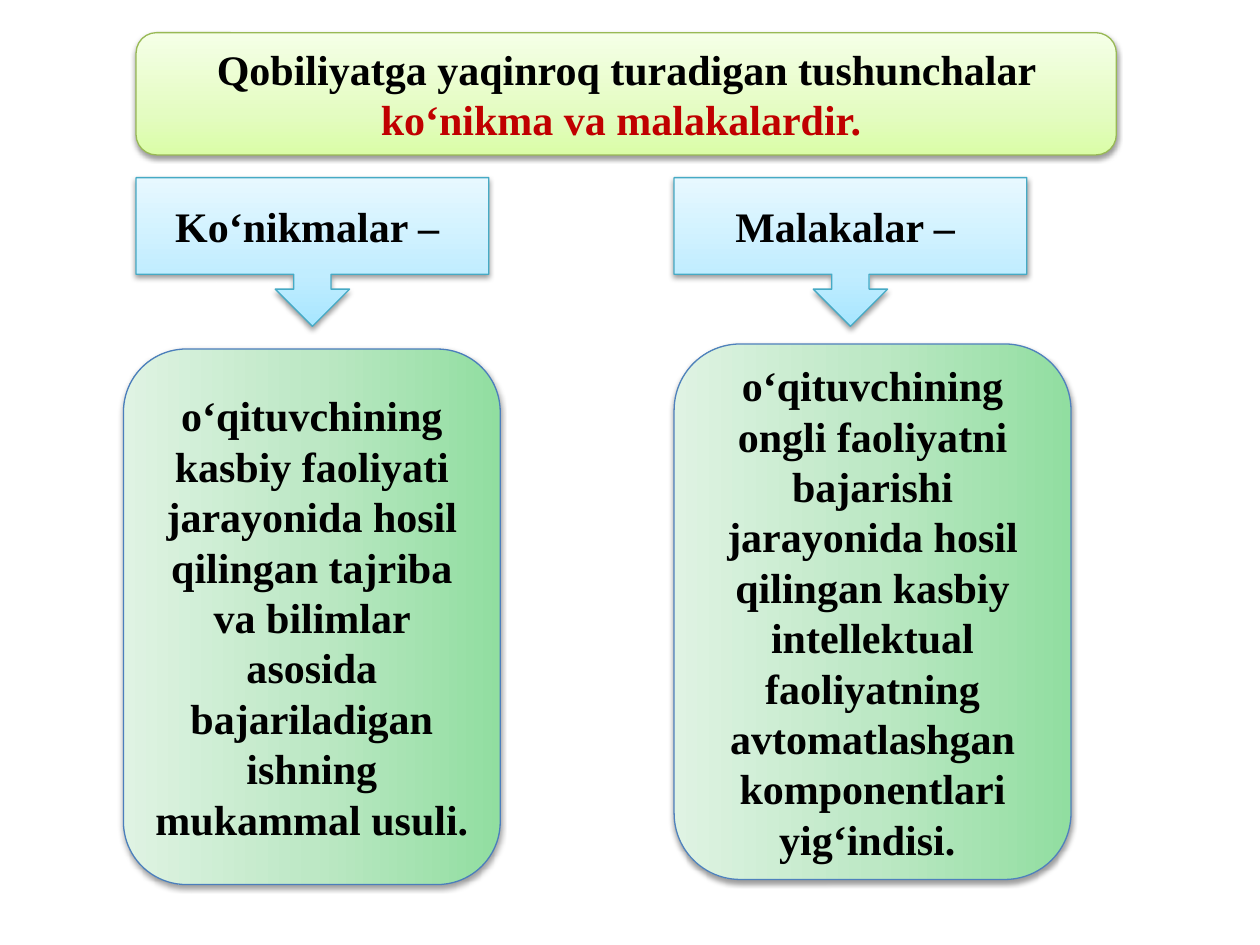
from collections import namedtuple
from dataclasses import dataclass, replace

from lxml import etree
from pptx import Presentation
from pptx.dml.color import RGBColor
from pptx.enum.shapes import MSO_SHAPE
from pptx.enum.text import MSO_ANCHOR, PP_ALIGN
from pptx.oxml.ns import qn
from pptx.util import Inches, Pt

ROUNDED = MSO_SHAPE.ROUNDED_RECTANGLE
CALLOUT = MSO_SHAPE.DOWN_ARROW_CALLOUT
PANEL = MSO_SHAPE.FLOWCHART_ALTERNATE_PROCESS
CENTER = PP_ALIGN.CENTER
MIDDLE = MSO_ANCHOR.MIDDLE

GRID = 0.1  # inches per column and per row: 100 columns by 75 rows
CALLOUT_WIDTH, CALLOUT_HEIGHT, PANEL_HEIGHT = 28, 11.8, 42.5

Box = namedtuple("Box", "left top width height")


@dataclass(frozen=True)
class Look:
    stops: tuple  # (percent, colour) pairs
    angle: int  # degrees clockwise
    line: str


@dataclass(frozen=True)
class Theme:
    font: str = "Times New Roman"
    size: int = 24
    text: str = "000000"
    accent: str = "C00000"
    line_width: float = 0.75
    header: Look = Look(((0, "DAFDA7"), (35, "E4FCC2"), (100, "F5FFE7")), 270, "98B955")
    callout: Look = Look(((0, "A7E6FF"), (35, "C1EDFF"), (100, "E7F8FF")), 270, "46AAC5")
    panel: Look = Look(((0, "91DEA0"), (50, "BDE8C5"), (100, "DFF3E3")), 180, "4B7EBC")


THEME = Theme()


def add_color(parent, color):
    return etree.SubElement(parent, qn("a:srgbClr"), val=color)


def apply_gradient(shape, look):
    gradient = etree.Element(qn("a:gradFill"), rotWithShape="1")
    stops = etree.SubElement(gradient, qn("a:gsLst"))
    for percent, color in look.stops:
        add_color(etree.SubElement(stops, qn("a:gs"), pos=str(percent * 1000)), color)
    etree.SubElement(gradient, qn("a:lin"), ang=str(look.angle * 60000), scaled="0")
    shape._element.spPr.find(qn("a:prstGeom")).addnext(gradient)


def apply_shadow(shape):
    shape.shadow.inherit = False
    effects = shape._element.spPr.find(qn("a:effectLst"))
    shadow = etree.SubElement(effects, qn("a:outerShdw"), blurRad="40000",
                              dist="20000", dir="5400000", rotWithShape="0")
    etree.SubElement(add_color(shadow, "000000"), qn("a:alpha"), val="38000")


def add_card(page, kind, box, look, spans):
    """Place a shaded shape with centred text; spans are (text, colour) pairs."""
    shape = page.shapes.add_shape(kind, *(Inches(length * GRID) for length in box))
    shape.line.color.rgb = RGBColor.from_string(look.line)
    shape.line.width = Pt(THEME.line_width)
    apply_gradient(shape, look)
    apply_shadow(shape)
    frame = shape.text_frame
    frame.word_wrap = True
    frame.vertical_anchor = MIDDLE
    para = frame.paragraphs[0]
    para.alignment = CENTER
    for text, color in spans:
        span = para.add_run()
        span.text = text
        span.font.name = THEME.font
        span.font.size = Pt(THEME.size)
        span.font.bold = True
        span.font.color.rgb = RGBColor.from_string(color)


def add_header(page, box):
    add_card(page, ROUNDED, box, THEME.header, [
        ("Qobiliyatga yaqinroq turadigan tushunchalar ", THEME.text),
        ("ko‘nikma va malakalardir. ", THEME.accent),
    ])


def add_concept(page, box, indent, look, term, meaning):
    """Callout at the top of the box, moved in by indent; panel at its bottom."""
    callout = Box(box.left + indent, box.top, CALLOUT_WIDTH, CALLOUT_HEIGHT)
    panel = Box(box.left, box.top + box.height - PANEL_HEIGHT, box.width, PANEL_HEIGHT)
    add_card(page, CALLOUT, callout, THEME.callout, [(term, THEME.text)])
    add_card(page, PANEL, panel, look, [(meaning, THEME.text)])


def main():
    deck = Presentation()
    deck.slide_width, deck.slide_height = Inches(10), Inches(7.5)
    page = deck.slides.add_slide(deck.slide_layouts[6])
    add_header(page, Box(10.8, 2.6, 77.8, 9.7))
    add_concept(
        page, Box(9.8, 14.1, 29.9, 56.1), 1, THEME.panel, "Ko‘nikmalar – ",
        "o‘qituvchining kasbiy faoliyati jarayonida hosil qilingan tajriba "
        "va bilimlar asosida bajariladigan ishning mukammal usuli. ")
    add_concept(
        page, Box(53.5, 14.1, 31.5, 55.7), 0, replace(THEME.panel, line="4F81BD"),
        "Malakalar – ",
        "o‘qituvchining ongli faoliyatni bajarishi jarayonida hosil qilingan kasbiy "
        "intellektual faoliyatning avtomatlashgan komponentlari yig‘indisi. ")
    deck.save("out.pptx")


if __name__ == "__main__":
    main()
